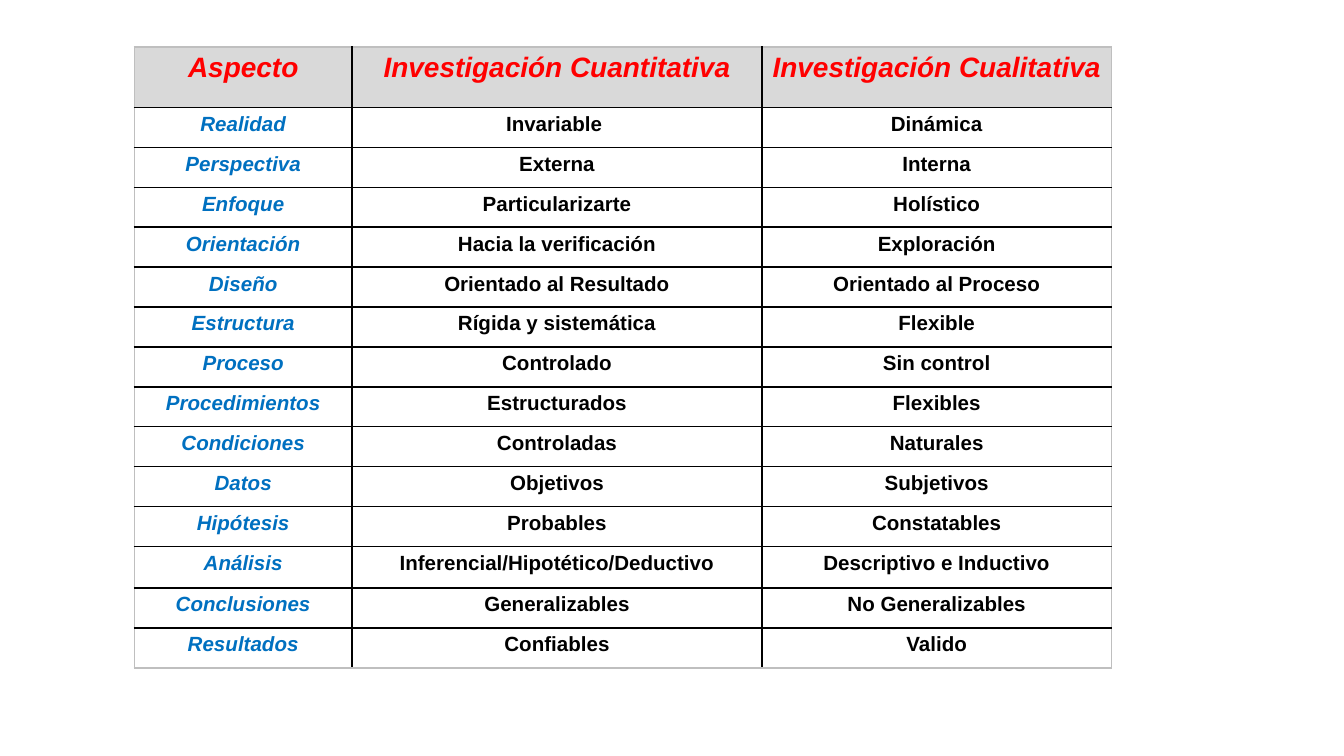
import lxml.etree
import pptx
import pptx.dml.color
import pptx.enum.text
import pptx.oxml.ns
import pptx.util

Inches = pptx.util.Inches
RGBColor = pptx.dml.color.RGBColor

RED = RGBColor(0xFF, 0x00, 0x00)
BLUE = RGBColor(0x00, 0x70, 0xC0)
BLACK = RGBColor(0x00, 0x00, 0x00)
HEADER_GRAY = RGBColor(0xD9, 0xD9, 0xD9)
EDGE_GRAY = RGBColor(0xBF, 0xBF, 0xBF)

SLIDE_WIDTH = 10
SLIDE_HEIGHT = SLIDE_WIDTH * 9 / 16
TABLE_HEIGHT = 4.62
HEADER_HEIGHT = 0.45
ANALYSIS_HEIGHT = 0.31
COLUMN_WIDTHS = [1.62, 3.05, 2.6]

HEADER = ("Aspecto", "Investigación Cuantitativa", "Investigación Cualitativa")
ASPECTS = [
    ("Realidad", "Invariable ", "Dinámica"),
    ("Perspectiva", "Externa", "Interna"),
    ("Enfoque", "Particularizarte", "Holístico"),
    ("Orientación", "Hacia la verificación", "Exploración"),
    ("Diseño", "Orientado al Resultado", "Orientado al Proceso"),
    ("Estructura", "Rígida y sistemática", "Flexible"),
    ("Proceso", "Controlado", "Sin control"),
    ("Procedimientos", "Estructurados", "Flexibles"),
    ("Condiciones", "Controladas", "Naturales"),
    ("Datos", "Objetivos", "Subjetivos"),
    ("Hipótesis", "Probables", "Constatables"),
    ("Análisis", "Inferencial/Hipotético/Deductivo", "Descriptivo e Inductivo"),
    ("Conclusiones", "Generalizables", "No Generalizables"),
    ("Resultados", "Confiables", "Valido"),
]


def write_text(cell, text, size=11, color=BLACK, italic=False):
    cell.margin_left = cell.margin_right = Inches(0.07)
    cell.margin_top = cell.margin_bottom = Inches(0.04)
    para = cell.text_frame.paragraphs[0]
    para.alignment = pptx.enum.text.PP_ALIGN.CENTER
    span = para.add_run()
    span.text = text
    span.font.name = "Arial"
    span.font.size = pptx.util.Pt(size)
    span.font.bold = True
    span.font.italic = italic
    span.font.color.rgb = color


def add_borders(cell, outer_sides):
    qn = pptx.oxml.ns.qn
    properties = cell._tc.get_or_add_tcPr()
    for side in ("L", "R", "T", "B"):
        color = EDGE_GRAY if side in outer_sides else BLACK
        line = lxml.etree.SubElement(
            properties, qn("a:ln" + side), w=str(pptx.util.Pt(1))
        )
        fill = lxml.etree.SubElement(line, qn("a:solidFill"))
        lxml.etree.SubElement(fill, qn("a:srgbClr"), val=str(color))


def find_outer_sides(row, column):
    edges = {
        "L": column == 0,
        "R": column == len(HEADER) - 1,
        "T": row == 0,
        "B": row == len(ASPECTS),
    }
    return [side for side, is_outer in edges.items() if is_outer]


def paint_cell(cell, row):
    if row == 0:
        cell.fill.solid()
        cell.fill.fore_color.rgb = HEADER_GRAY
    else:
        cell.fill.background()


def get_text_format(row, column):
    if row == 0:
        return {"size": 15, "color": RED, "italic": True}
    if column == 0:
        return {"color": BLUE, "italic": True}
    return {}


def size_table(table):
    for column, width in zip(table.columns, COLUMN_WIDTHS):
        column.width = Inches(width)
    remaining = TABLE_HEIGHT - HEADER_HEIGHT - ANALYSIS_HEIGHT
    regular_height = remaining / (len(ASPECTS) - 1)
    table.rows[0].height = Inches(HEADER_HEIGHT)
    for row, texts in enumerate(ASPECTS, start=1):
        height = ANALYSIS_HEIGHT if texts[0] == "Análisis" else regular_height
        table.rows[row].height = Inches(height)


def add_comparison_table(page):
    frame = page.shapes.add_table(
        len(ASPECTS) + 1, len(HEADER),
        Inches(1), Inches(0.35), Inches(sum(COLUMN_WIDTHS)), Inches(TABLE_HEIGHT),
    )
    table = frame.table
    table.first_row = False
    table.horz_banding = False
    size_table(table)
    for row, texts in enumerate([HEADER, *ASPECTS]):
        for column, text in enumerate(texts):
            cell = table.cell(row, column)
            write_text(cell, text, **get_text_format(row, column))
            add_borders(cell, find_outer_sides(row, column))
            paint_cell(cell, row)


def main():
    deck = pptx.Presentation()
    deck.slide_width = Inches(SLIDE_WIDTH)
    deck.slide_height = Inches(SLIDE_HEIGHT)
    page = deck.slides.add_slide(deck.slide_layouts[6])
    add_comparison_table(page)
    deck.save("out.pptx")


if __name__ == "__main__":
    main()
